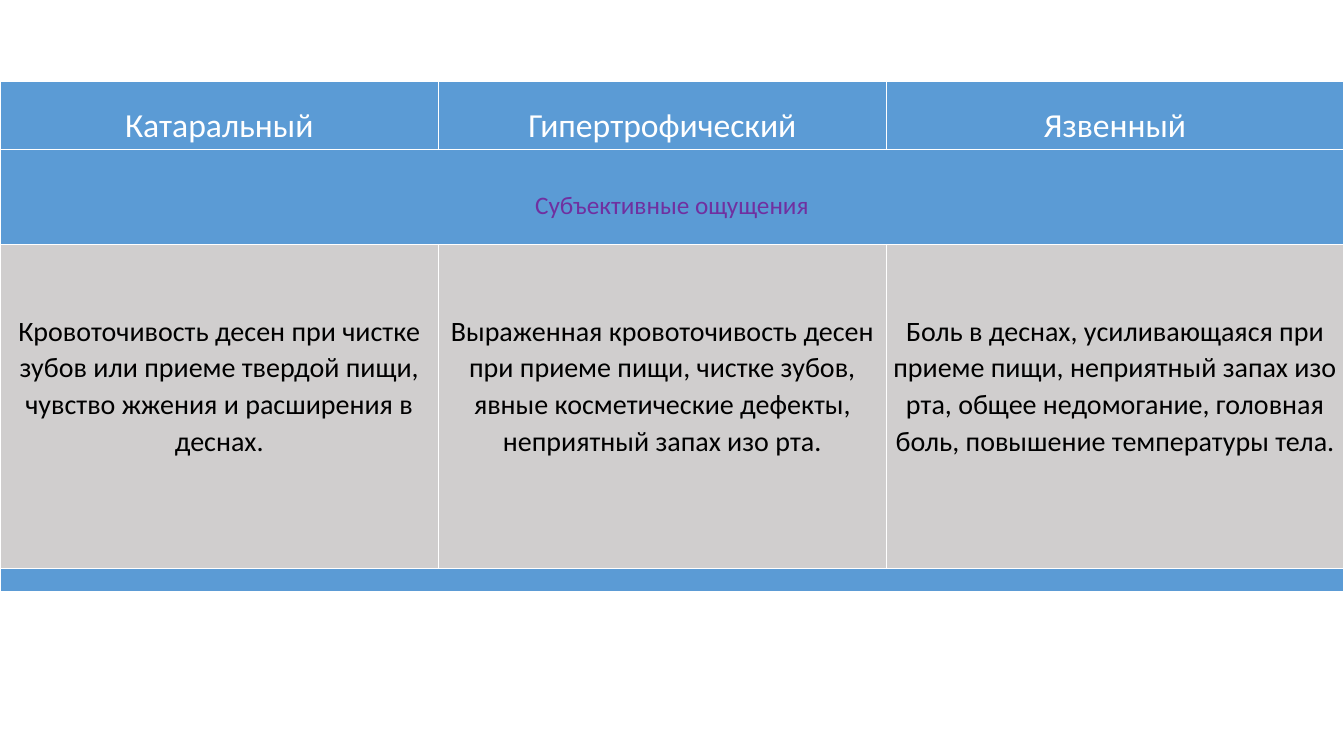
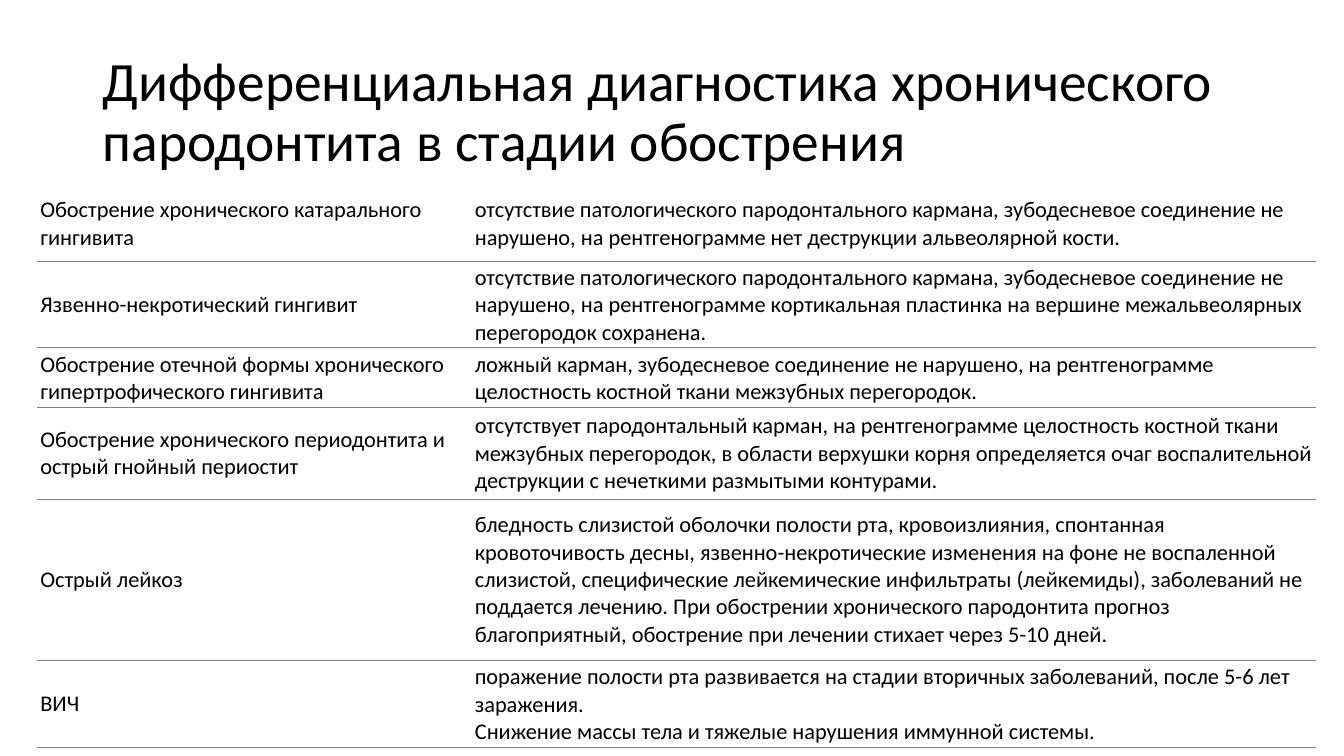
from lxml import etree
from pptx import Presentation
from pptx.dml.color import RGBColor
from pptx.enum.text import MSO_ANCHOR, PP_ALIGN
from pptx.oxml.ns import qn
from pptx.util import Inches, Pt

CENTER, LEFT = PP_ALIGN.CENTER, PP_ALIGN.LEFT
MIDDLE, BOTTOM = MSO_ANCHOR.MIDDLE, MSO_ANCHOR.BOTTOM
WHITE = RGBColor(0xFF, 0xFF, 0xFF)
BLACK = RGBColor(0x00, 0x00, 0x00)
BLUE = RGBColor(0x5B, 0x9B, 0xD5)
PURPLE = RGBColor(0x70, 0x30, 0xA0)
SILVER = RGBColor(0xD0, 0xCE, 0xCE)
GRAY = RGBColor(0x80, 0x80, 0x80)
FONT = "Calibri"
INSET = 0.03

deck = Presentation()
deck.slide_width, deck.slide_height = Inches(13.33), Inches(7.5)
blank = deck.slide_layouts[6]


def add_grid(page, left, top, columns, rows):
    frame = page.shapes.add_table(
        len(rows), len(columns), Inches(left), Inches(top),
        Inches(sum(columns)), Inches(sum(rows)))
    table = frame.table
    table.first_row = table.horz_banding = False
    for column, width in zip(table.columns, columns):
        column.width = Inches(width)
    for row, height in zip(table.rows, rows):
        row.height = Inches(height)
    return table


def style_cell(cell, text, size, color, fill, anchor, align, borders, width, below=INSET):
    cell.margin_left = cell.margin_right = cell.margin_top = Inches(INSET)
    cell.margin_bottom = Inches(below)
    cell.vertical_anchor = anchor
    properties = cell._tc.get_or_add_tcPr()
    for side, border in zip(("a:lnL", "a:lnR", "a:lnT", "a:lnB"), borders):
        line = etree.SubElement(properties, qn(side), w=str(Pt(width)))
        solid = etree.SubElement(line, qn("a:solidFill"))
        etree.SubElement(solid, qn("a:srgbClr"), val=str(border))
    cell.fill.solid()
    cell.fill.fore_color.rgb = fill
    para = cell.text_frame.paragraphs[0]
    para.alignment = align
    para.font.name, para.font.size, para.font.color.rgb = FONT, Pt(size), color
    if text:
        para.text = text
    else:
        etree.SubElement(para._p, qn("a:endParaRPr"), sz=str(size * 100))
    return para


page = deck.slides.add_slide(blank)
symptoms = [
    (0.67, 24, WHITE, BLUE, BOTTOM, INSET,
     ["Катаральный", "Гипертрофический", "Язвенный"]),
    (0.95, 18, PURPLE, BLUE, BOTTOM, 0.23, ["Субъективные ощущения"]),
    (3.21, 20, BLACK, SILVER, MIDDLE, 0.45, [
        "Кровоточивость десен при чистке зубов или приеме твердой пищи, "
        "чувство жжения и расширения в деснах.",
        "Выраженная кровоточивость десен при приеме пищи, чистке зубов, "
        "явные косметические дефекты, неприятный запах изо рта.",
        "Боль в деснах, усиливающаяся при приеме пищи, неприятный запах изо рта, "
        "общее недомогание, головная боль, повышение температуры тела."]),
    (0.23, 8, WHITE, BLUE, MIDDLE, INSET, [""]),
]
table = add_grid(page, 0, 0.81, [4.35, 4.44, 4.54], [row[0] for row in symptoms])
for index, (height, size, color, fill, anchor, below, texts) in enumerate(symptoms):
    if len(texts) == 1:
        table.cell(index, 0).merge(table.cell(index, 2))
    for column in range(3):
        text = texts[column] if column < len(texts) else ""
        para = style_cell(table.cell(index, column), text, size, color, fill,
                          anchor, CENTER, [WHITE] * 4, 1, below)
        para.line_spacing = 1.07

page = deck.slides.add_slide(blank)
title = page.shapes.add_textbox(Inches(0.92), Inches(0.4), Inches(11.5), Inches(1.45))
title.text_frame.word_wrap = True
title.text_frame.vertical_anchor = MIDDLE
para = title.text_frame.paragraphs[0]
para.text = "Дифференциальная диагностика хронического пародонтита в стадии обострения"
para.line_spacing = 0.9
para.font.name, para.font.size, para.font.color.rgb = FONT, Pt(39.6), BLACK

diagnoses = [
    (0.74, "Обострение хронического катарального гингивита",
     "отсутствие патологического пародонтального кармана, зубодесневое соединение "
     "не нарушено, на рентгенограмме нет деструкции альвеолярной кости."),
    (0.8, "Язвенно-некротический гингивит",
     "отсутствие патологического пародонтального кармана, зубодесневое соединение "
     "не нарушено, на рентгенограмме кортикальная пластинка на вершине "
     "межальвеолярных перегородок сохранена."),
    (0.57, "Обострение отечной формы хронического гипертрофического гингивита",
     "ложный карман, зубодесневое соединение не нарушено, на рентгенограмме "
     "целостность костной ткани межзубных перегородок."),
    (0.91, "Обострение хронического периодонтита и острый гнойный периостит",
     "отсутствует пародонтальный карман, на рентгенограмме целостность костной ткани "
     "межзубных перегородок, в области верхушки корня определяется очаг "
     "воспалительной деструкции с нечеткими размытыми контурами."),
    (1.6, "Острый лейкоз",
     "бледность слизистой оболочки полости рта, кровоизлияния, спонтанная "
     "кровоточивость десны, язвенно-некротические изменения на фоне не воспаленной "
     "слизистой, специфические лейкемические инфильтраты (лейкемиды), заболеваний не "
     "поддается лечению. При обострении хронического пародонтита прогноз "
     "благоприятный, обострение при лечении стихает через 5-10 дней."),
    (0.8, "ВИЧ",
     "поражение полости рта развивается на стадии вторичных заболеваний, "
     "после 5-6 лет заражения.\vСнижение массы тела и тяжелые нарушения "
     "иммунной системы."),
]
table = add_grid(page, 0.37, 1.85, [4.31, 8.37], [row[0] for row in diagnoses])
for index, (height, *texts) in enumerate(diagnoses):
    borders = [WHITE, WHITE, GRAY if index else WHITE, GRAY]
    for column, text in enumerate(texts):
        style_cell(table.cell(index, column), text, 16, BLACK, WHITE,
                   MIDDLE, LEFT, borders, 0.75)

deck.save("out.pptx")
